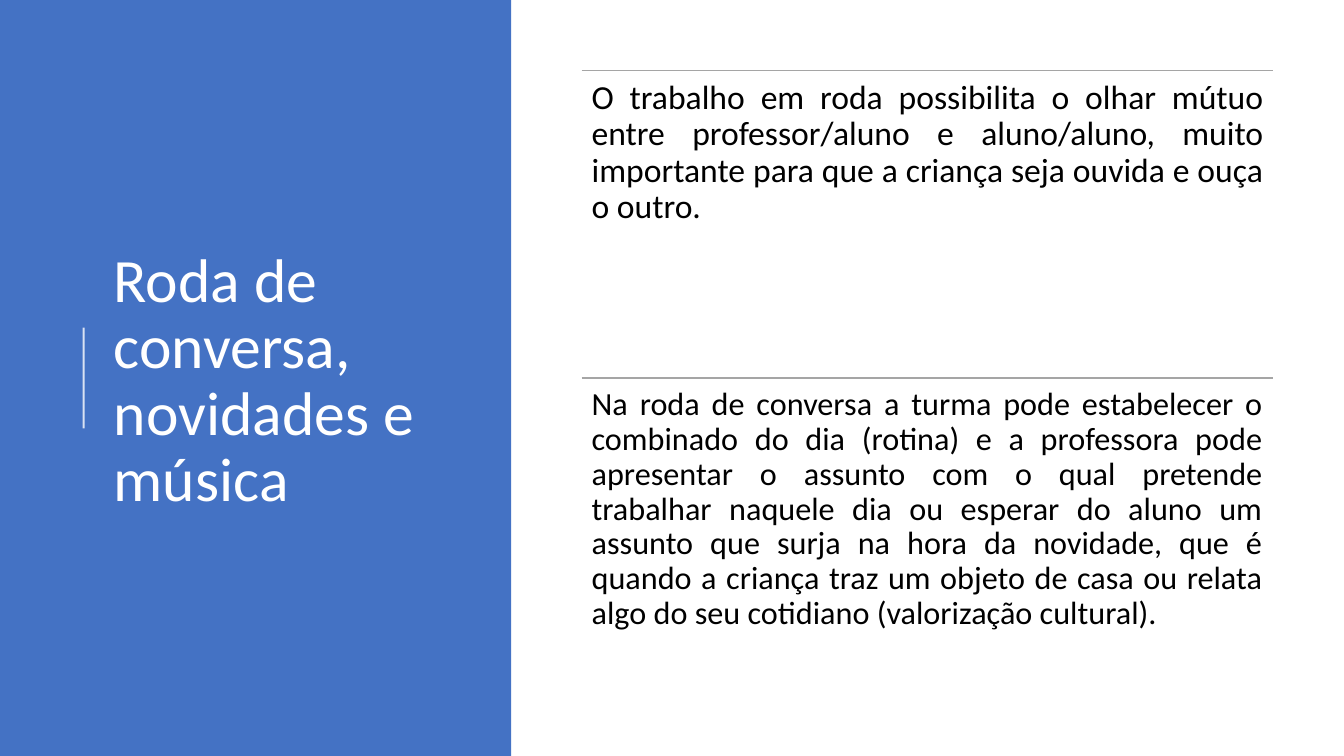
from dataclasses import dataclass

from lxml.etree import SubElement
from pptx import Presentation
from pptx.dml.color import RGBColor
from pptx.enum.shapes import MSO_CONNECTOR as Connector, MSO_SHAPE as Preset
from pptx.enum.text import MSO_ANCHOR as Anchor, PP_ALIGN as Align
from pptx.oxml.ns import qn
from pptx.slide import Slide
from pptx.util import Inches, Pt


@dataclass(frozen=True)
class Theme:
    font: str = "Calibri"
    panel: RGBColor = RGBColor(0x44, 0x72, 0xC4)
    title: RGBColor = RGBColor(0xFF, 0xFF, 0xFF)
    body: RGBColor = RGBColor(0, 0, 0)
    divider: RGBColor = RGBColor(0xA5, 0xA5, 0xA5)
    title_size: float = 44
    line_spacing: float = 0.9


@dataclass(frozen=True)
class Box:
    left: float
    top: float
    width: float
    height: float


@dataclass(frozen=True)
class Section:
    text: str
    size: float


THEME = Theme()
SLIDE_WIDTH, SLIDE_HEIGHT = 13.33, 7.5
SECTION_AREA = Box(5.77, 0.7, 6.86, 6.1)
SECTIONS = [
    Section(
        "O trabalho em roda possibilita o olhar mútuo entre professor/aluno e "
        "aluno/aluno, muito importante para que a criança seja ouvida e ouça o outro.",
        24,
    ),
    Section(
        "Na roda de conversa a turma pode estabelecer o combinado do dia (rotina) "
        "e a professora pode apresentar o assunto com o qual pretende trabalhar "
        "naquele dia ou esperar do aluno um assunto que surja na hora da novidade, "
        "que é quando a criança traz um objeto de casa ou relata algo do seu "
        "cotidiano (valorização cultural).",
        23,
    ),
]


def add_panel(slide: Slide, box: Box) -> None:
    panel = slide.shapes.add_shape(
        Preset.RECTANGLE,
        Inches(box.left), Inches(box.top), Inches(box.width), Inches(box.height),
    )
    panel.shadow.inherit = False
    panel.fill.solid()
    panel.fill.fore_color.rgb = THEME.panel
    panel.line.fill.background()


def add_line(slide: Slide, start: tuple[float, float], end: tuple[float, float],
             color: RGBColor, width: float, opacity: int = 100) -> None:
    """Draw a straight line; opacity is a percentage."""
    line = slide.shapes.add_connector(
        Connector.STRAIGHT, *(Inches(value) for value in (*start, *end))
    )
    line.line.color.rgb = color
    line.line.width = Pt(width)
    properties = line._element.spPr
    if opacity < 100:
        solid_color = properties.find(".//" + qn("a:srgbClr"))
        SubElement(solid_color, qn("a:alpha"), val=str(opacity * 1000))
    SubElement(properties, qn("a:effectLst"))


def add_text(slide: Slide, box: Box, text: str, size: float, color: RGBColor,
             align: Align, anchor: Anchor, vertical_inset: float) -> None:
    text_box = slide.shapes.add_textbox(
        Inches(box.left), Inches(box.top), Inches(box.width), Inches(box.height)
    )
    frame = text_box.text_frame
    frame.word_wrap = True
    frame.vertical_anchor = anchor
    frame.margin_left = frame.margin_right = Inches(0.1)
    frame.margin_top = frame.margin_bottom = Inches(vertical_inset)
    paragraph = frame.paragraphs[0]
    paragraph.text = text
    paragraph.alignment = align
    paragraph.line_spacing = THEME.line_spacing
    paragraph.font.name = THEME.font
    paragraph.font.size = Pt(size)
    paragraph.font.color.rgb = color


def add_sections(slide: Slide, area: Box, sections: list[Section]) -> None:
    """Share the area equally among the sections, each under a divider."""
    height = area.height / len(sections)
    for index, section in enumerate(sections):
        top = area.top + index * height
        add_line(slide, (area.left, top), (area.left + area.width, top),
                 THEME.divider, 1)
        add_text(slide, Box(area.left, top, area.width, height), section.text,
                 section.size, THEME.body, Align.JUSTIFY, Anchor.TOP, 0.1)


def main() -> None:
    presentation = Presentation()
    presentation.slide_width = Inches(SLIDE_WIDTH)
    presentation.slide_height = Inches(SLIDE_HEIGHT)
    slide = presentation.slides.add_slide(presentation.slide_layouts[6])

    add_panel(slide, Box(0, 0, 5.07, SLIDE_HEIGHT))
    add_line(slide, (0.83, 4.25), (0.83, 3.25), THEME.title, 1.5, opacity=80)
    add_text(slide, Box(1.03, 0.78, 3.69, 6.02),
             "Roda de conversa, novidades e música", THEME.title_size,
             THEME.title, Align.LEFT, Anchor.MIDDLE, 0.05)
    add_sections(slide, SECTION_AREA, SECTIONS)

    presentation.save("out.pptx")


if __name__ == "__main__":
    main()
